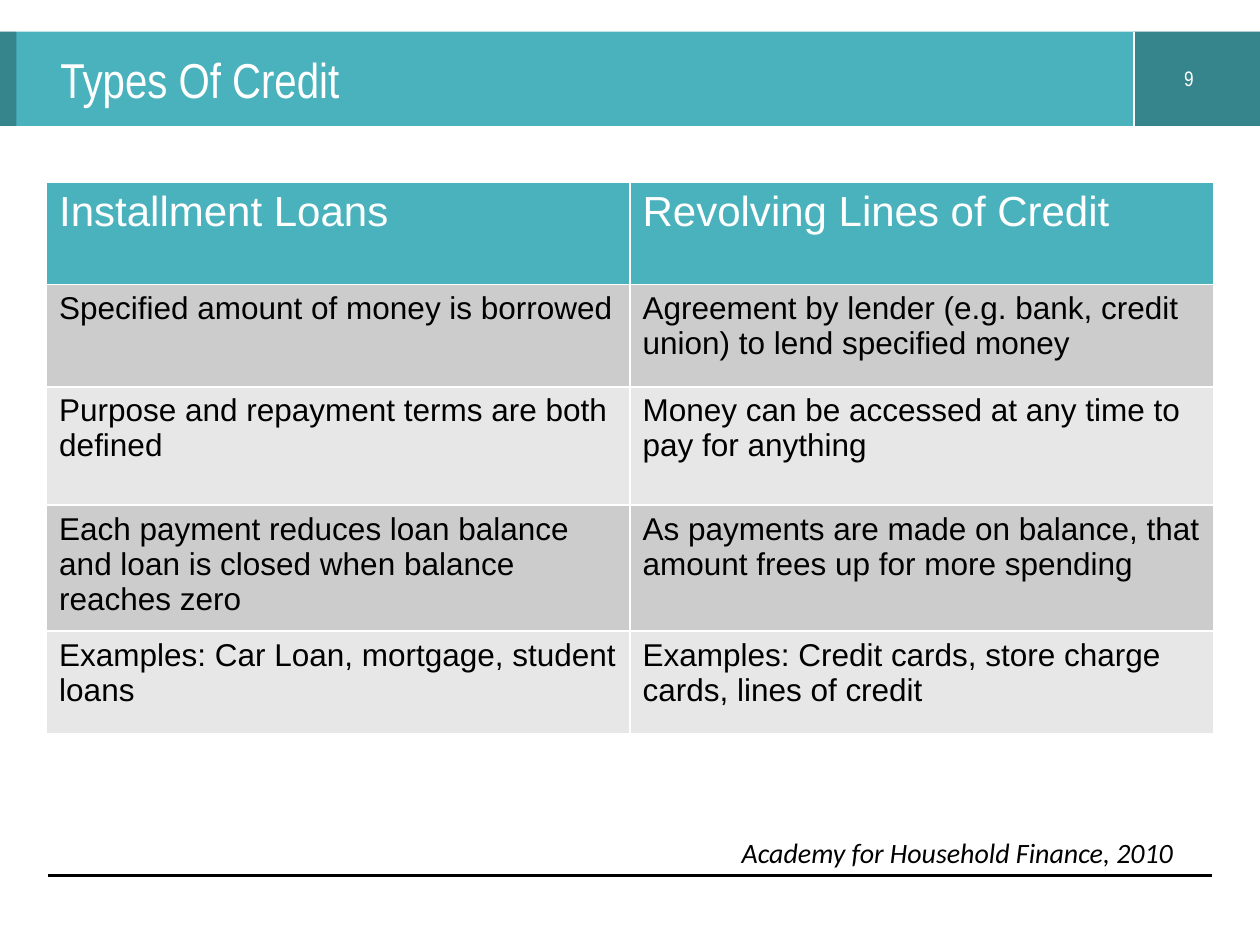
from pptx import Presentation
from pptx.dml.color import RGBColor
from pptx.enum.shapes import MSO_CONNECTOR, MSO_SHAPE
from pptx.enum.text import MSO_ANCHOR, PP_ALIGN
from pptx.oxml.ns import qn
from pptx.util import Inches, Pt
from lxml.etree import SubElement

TEAL, WHITE, BLACK = "4AB2BC", "FFFFFF", "000000"
BANDS = ["CCCCCC", "E7E7E7"]
ROWS = [
    ("Installment Loans", "Revolving Lines of Credit"),
    ("Specified amount of money is borrowed",
     "Agreement by lender (e.g. bank, credit union) to lend specified money"),
    ("Purpose and repayment terms are both defined",
     "Money can be accessed at any time to pay for anything"),
    ("Each payment reduces loan balance and loan is closed when balance reaches zero",
     "As payments are made on balance, that amount frees up for more spending"),
    ("Examples: Car Loan, mortgage, student loans",
     "Examples: Credit cards, store charge cards, lines of credit"),
]
HEIGHTS = [0.81, 0.81, 0.94, 0.94, 0.81]


def color(code):
    return RGBColor.from_string(code)


class Deck:
    def __init__(self, width, height):
        self.show = Presentation()
        self.show.slide_width = Inches(width)
        self.show.slide_height = Inches(height)
        self.slide = self.show.slides.add_slide(self.show.slide_layouts[6])
        self.shapes = self.slide.shapes

    def paint(self, item, fill):
        item.fill.solid()
        item.fill.fore_color.rgb = color(fill)

    def style(self, para, size, face, ink, italic=False):
        font = para.font
        font.size = Pt(size)
        font.name = face
        font.bold = False
        font.italic = italic
        font.color.rgb = color(ink)

    def bar(self, box, fill, alpha=None):
        shape = self.shapes.add_shape(MSO_SHAPE.RECTANGLE, *map(Inches, box))
        shape.shadow.inherit = False
        shape.line.fill.background()
        self.paint(shape, fill)
        if alpha is not None:
            tint = shape.fill._xPr.find(".//" + qn("a:srgbClr"))
            SubElement(tint, qn("a:alpha")).set("val", str(alpha * 1000))

    def line(self, ends, ink, width):
        rule = self.shapes.add_connector(MSO_CONNECTOR.STRAIGHT, *map(Inches, ends))
        rule.line.color.rgb = color(ink)
        rule.line.width = Pt(width)
        SubElement(rule._element.spPr, qn("a:effectLst"))

    def text(self, box, words, size, face, ink, align=PP_ALIGN.LEFT,
             anchor=MSO_ANCHOR.TOP, italic=False):
        frame = self.shapes.add_textbox(*map(Inches, box)).text_frame
        frame.word_wrap = True
        frame.vertical_anchor = anchor
        para = frame.paragraphs[0]
        para.text = words
        para.alignment = align
        self.style(para, size, face, ink, italic)

    def table(self, box, rows, heights):
        grid = self.shapes.add_table(len(rows), len(rows[0]), *map(Inches, box)).table
        for r, (row, height) in enumerate(zip(rows, heights)):
            grid.rows[r].height = Inches(height)
            head = r == 0
            for c, words in enumerate(row):
                cell = grid.cell(r, c)
                self.paint(cell, TEAL if head else BANDS[(r - 1) % 2])
                cell.text = words
                self.style(cell.text_frame.paragraphs[0], 24 if head else 18,
                           "Arial", WHITE if head else BLACK)


def main():
    deck = Deck(10, 7.5)
    deck.bar((0, 0.25, 10, 0.75), TEAL)
    deck.line((0.38, 6.95, 9.62, 6.95), BLACK, 2)
    deck.bar((9, 0.25, 1, 0.75), BLACK, 25)
    deck.text((9, 0.47, 0.87, 0.3), "9", 12, "Arial Narrow", WHITE, PP_ALIGN.CENTER)
    deck.bar((-0.01, 0.25, 0.14, 0.75), BLACK, 25)
    deck.line((9, 0.25, 9, 1), WHITE, 1.25)
    deck.text((0.38, 0.25, 7.99, 0.75), "Types Of Credit", 28, "Arial Narrow", WHITE,
              anchor=MSO_ANCHOR.MIDDLE)
    deck.table((0.37, 1.45, 9.26, sum(HEIGHTS)), ROWS, HEIGHTS)
    deck.text((0.58, 6.58, 8.83, 0.37), "Academy for Household Finance, 2010", 16,
              "Calibri", BLACK, PP_ALIGN.RIGHT, italic=True)
    deck.show.save("out.pptx")


if __name__ == "__main__":
    main()
